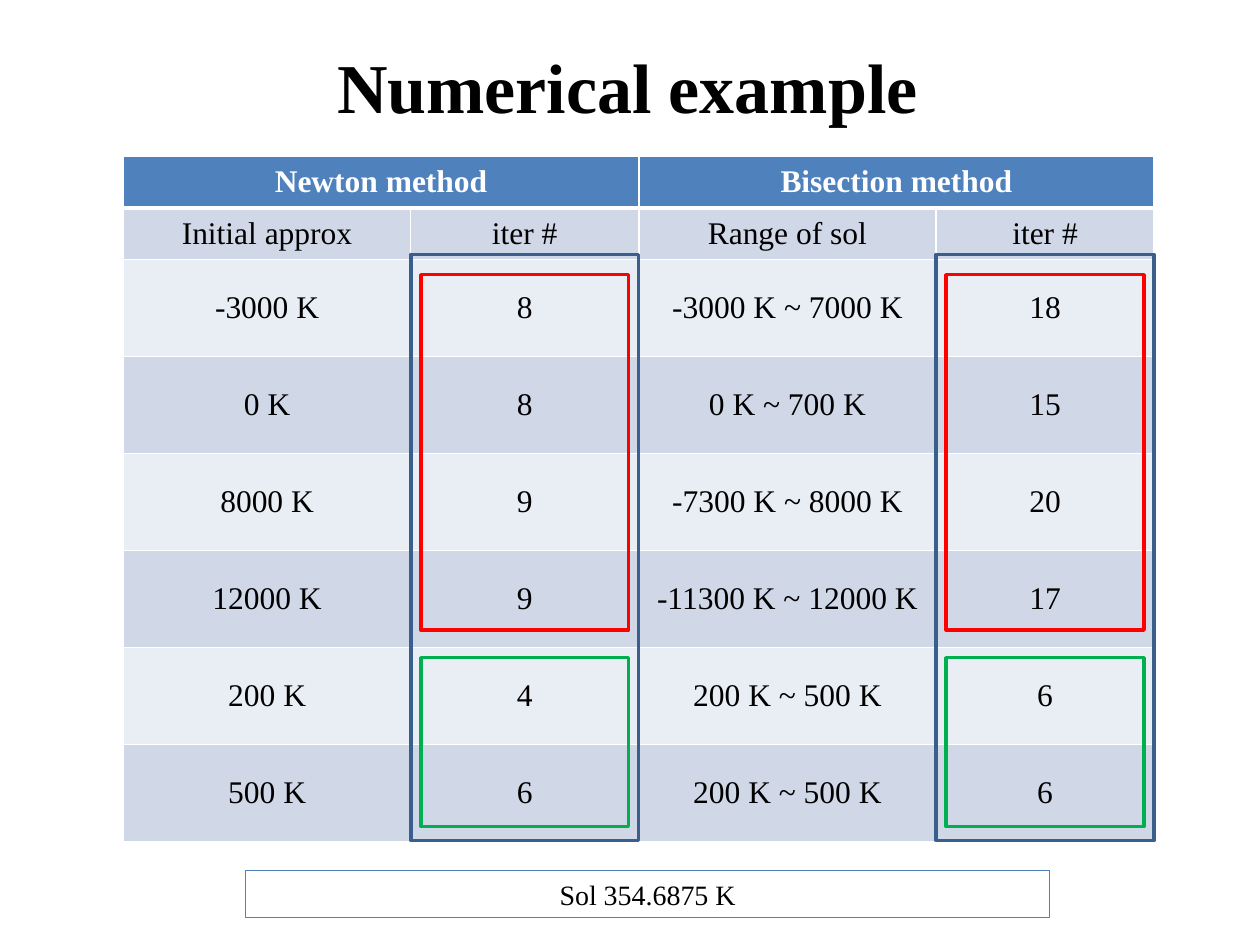
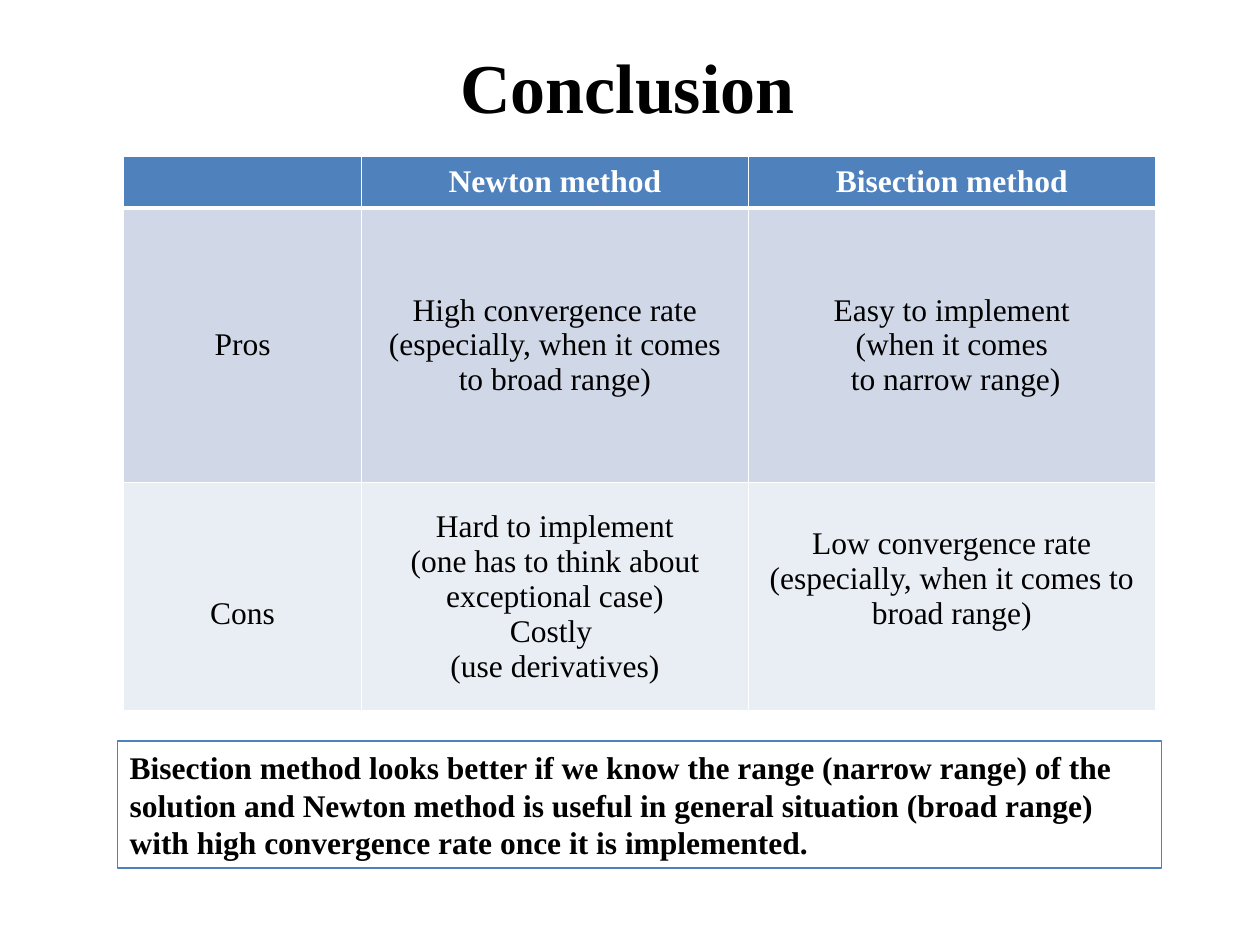
from dataclasses import dataclass
from lxml import etree
from pptx import Presentation
from pptx.dml.color import RGBColor
from pptx.enum.shapes import MSO_SHAPE
from pptx.enum.text import MSO_ANCHOR, PP_ALIGN
from pptx.oxml.ns import qn
from pptx.util import Inches, Pt

RECT = MSO_SHAPE.RECTANGLE
MIDDLE = MSO_ANCHOR.MIDDLE
LEFT, CENTER = PP_ALIGN.LEFT, PP_ALIGN.CENTER


@dataclass(frozen=True)
class Theme:
    font: str = "Times New Roman"
    title_size: int = 40
    body_size: int = 18
    note_size: int = 16
    text: str = "000000"
    white: str = "FFFFFF"
    header: str = "4F81BD"
    bands: tuple = ("D0D8E8", "E9EDF4")
    column_frame: str = "3A5F8C"
    broad_frame: str = "FF0000"
    narrow_frame: str = "00B050"


T = Theme()

# Content: a line break inside a cell starts a new paragraph
RESULTS = [
    ("Newton method", "", "Bisection method", ""),
    ("Initial approx", "iter #", "Range of sol", "iter #"),
    ("-3000 K", "8", "-3000 K ~ 7000 K", "18"),
    ("0 K", "8", "0 K ~ 700 K", "15"),
    ("8000 K", "9", "-7300 K ~ 8000 K", "20"),
    ("12000 K", "9", "-11300 K ~ 12000 K", "17"),
    ("200 K", "4", "200 K ~ 500 K", "6"),
    ("500 K", "6", "200 K ~ 500 K", "6"),
]
SOLUTION = "Sol 354.6875 K"
COMPARISON = [
    ("", "Newton method", "Bisection method"),
    ("Pros",
     "High convergence rate\n(especially, when it comes to broad range)",
     "Easy to implement\n(when it comes\n to narrow range)"),
    ("Cons",
     "Hard to implement\n(one has to think about exceptional case)\n"
     "Costly \n(use derivatives)",
     "Low convergence rate\n(especially, when it comes to broad range)"),
]
VERDICT = ("Bisection method looks better if we know the range (narrow range) "
           "of the solution and Newton method is useful in general situation "
           "(broad range) with high convergence rate once it is implemented.")

# Layout in inches
TABLE_LEFT, TABLE_TOP, HEADER_H = 0.98, 1.24, 0.41
RESULT_COLS = [2.28, 1.81, 2.36, 1.73]
RESULT_ROWS = [HEADER_H] * 2 + [0.77] * 6
COMPARISON_COLS = [1.89, 3.07, 3.23]
COMPARISON_ROWS = [HEADER_H, 2.18, 1.81]
ITER_COLS = (1, 3)
LINE_SHIFT = 0.33
# colour, top, height, inset from the column edges
FRAMES = [
    (T.column_frame, 2.02, 4.65, 0),
    (T.broad_frame, 2.18, 2.82, 0.08),
    (T.narrow_frame, 5.22, 1.34, 0.08),
]


def rgb(value):
    return RGBColor.from_string(value)


def write(tf, text, size=T.body_size, color=T.text, bold=False, align=CENTER):
    tf.word_wrap = True
    for i, line in enumerate(text.split("\n")):
        p = tf.paragraphs[0] if i == 0 else tf.add_paragraph()
        p.alignment = align
        r = p.add_run()
        r.text = line
        r.font.name = T.font
        r.font.size = Pt(size)
        r.font.bold = bold
        r.font.color.rgb = rgb(color)


def add_slide(prs, title):
    s = prs.slides.add_slide(prs.slide_layouts[5])
    sp = s.shapes.title
    sp.left, sp.top = Inches(-0.02), Inches(0.29)
    sp.width, sp.height = Inches(10), Inches(0.77)
    sp.text_frame.vertical_anchor = MIDDLE
    write(sp.text_frame, title, size=T.title_size, bold=True)
    return s


def add_box(s, left, top, width, height, color, weight):
    sp = s.shapes.add_shape(RECT, Inches(left), Inches(top),
                            Inches(width), Inches(height))
    sp.shadow.inherit = False
    sp.fill.background()
    sp.line.color.rgb = rgb(color)
    sp.line.width = Pt(weight)
    return sp


def set_borders(cell, top, bottom):
    tc_pr = cell._tc.get_or_add_tcPr()
    sides = {"lnL": 1, "lnR": 1, "lnT": top, "lnB": bottom}
    for i, (side, weight) in enumerate(sides.items()):
        ln = etree.Element(qn(f"a:{side}"), w=str(Pt(weight)))
        fill = etree.SubElement(ln, qn("a:solidFill"))
        etree.SubElement(fill, qn("a:srgbClr"), val=T.white)
        tc_pr.insert(i, ln)


def add_table(s, rows, cols, heights):
    table = s.shapes.add_table(
        len(rows), len(cols), Inches(TABLE_LEFT), Inches(TABLE_TOP),
        Inches(sum(cols)), Inches(sum(heights))).table
    for column, width in zip(table.columns, cols):
        column.width = Inches(width)
    for i, values in enumerate(rows):
        table.rows[i].height = Inches(heights[i])
        is_header = i == 0
        for j, text in enumerate(values):
            cell = table.cell(i, j)
            cell.vertical_anchor = MIDDLE
            cell.fill.solid()
            cell.fill.fore_color.rgb = rgb(
                T.header if is_header else T.bands[(i - 1) % 2])
            set_borders(cell, top=3 if i == 1 else 1,
                        bottom=3 if is_header else 1)
            if text:
                write(cell.text_frame, text, bold=is_header,
                      color=T.white if is_header else T.text)
    return table


def build_example(prs):
    s = add_slide(prs, "Numerical example")
    table = add_table(s, RESULTS, RESULT_COLS, RESULT_ROWS)
    for j in (0, 2):
        table.cell(0, j).merge(table.cell(0, j + 1))

    # Frames around the iteration counts
    for j in ITER_COLS:
        left = TABLE_LEFT + sum(RESULT_COLS[:j])
        for color, top, height, inset in FRAMES:
            add_box(s, left + inset, top, RESULT_COLS[j] - 2 * inset, height,
                    color, 2)

    sp = add_box(s, 1.95, 6.91, 6.38, 0.37, T.header, 0.75)
    write(sp.text_frame, SOLUTION, size=T.note_size)


def build_conclusion(prs):
    s = add_slide(prs, "Conclusion")
    table = add_table(s, COMPARISON, COMPARISON_COLS, COMPARISON_ROWS)
    # The outer cells of the last row sit half a line off centre
    table.cell(2, 0).margin_top = Inches(LINE_SHIFT)
    table.cell(2, 2).margin_bottom = Inches(LINE_SHIFT)

    sp = add_box(s, 0.93, 5.88, 8.29, 1.01, T.header, 0.75)
    write(sp.text_frame, VERDICT, bold=True, align=LEFT)


def main():
    prs = Presentation()
    prs.slide_width, prs.slide_height = Inches(10), Inches(7.5)
    build_example(prs)
    build_conclusion(prs)
    prs.save("out.pptx")


if __name__ == "__main__":
    main()
